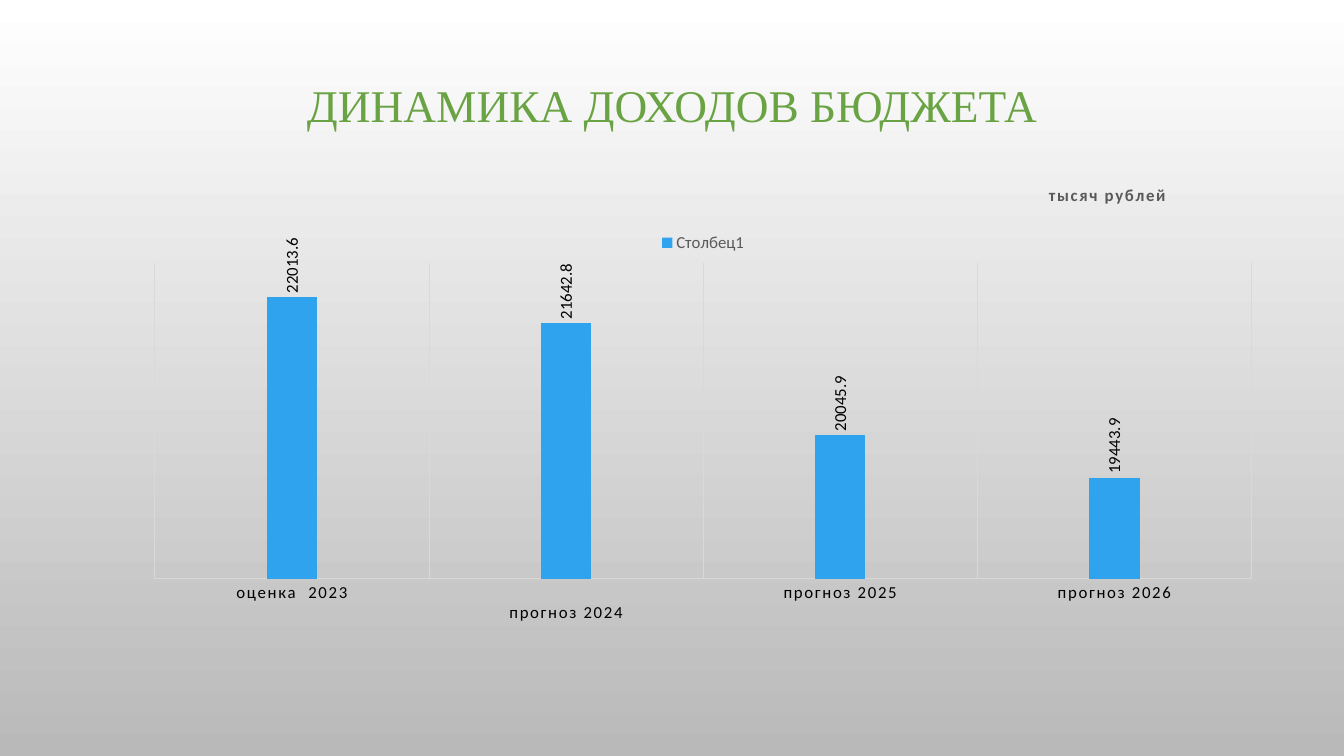
"""Build a slide with a column chart of budget revenue by year."""
from pptx import Presentation
from pptx.chart.data import CategoryChartData
from pptx.dml.color import RGBColor
from pptx.enum.chart import XL_CHART_TYPE, XL_LABEL_POSITION, XL_LEGEND_POSITION, XL_TICK_MARK
from pptx.enum.text import MSO_ANCHOR, PP_ALIGN
from pptx.oxml import parse_xml
from pptx.oxml.ns import nsdecls
from pptx.util import Inches, Pt

COLUMNS = XL_CHART_TYPE.COLUMN_CLUSTERED
OUTSIDE_END = XL_LABEL_POSITION.OUTSIDE_END
LEGEND_TOP = XL_LEGEND_POSITION.TOP
NO_TICKS = XL_TICK_MARK.NONE
MIDDLE = MSO_ANCHOR.MIDDLE
CENTER = PP_ALIGN.CENTER


def rgb(hex_color):
    return RGBColor.from_string(hex_color)


def place(part, index, inner, **fractions):
    for old_layout in part.xpath("c:layout"):
        part.remove(old_layout)
    target = '<c:layoutTarget val="inner"/>' if inner else ""
    modes = '<c:xMode val="edge"/><c:yMode val="edge"/>'
    sizes = "".join(f'<c:{key} val="{value}"/>' for key, value in fractions.items())
    part.insert(index, parse_xml(
        f'<c:layout {nsdecls("c")}><c:manualLayout>{target}{modes}{sizes}'
        "</c:manualLayout></c:layout>"))


prs = Presentation()
prs.slide_width, prs.slide_height = Inches(13.33), Inches(7.5)
slide = prs.slides.add_slide(prs.slide_layouts[6])

backdrop = slide.background.fill
backdrop.gradient()
backdrop.gradient_angle = 270
for stop, position, color in zip(backdrop.gradient_stops, (0, 1), ("FFFFFF", "B9B9B9")):
    stop.position = position
    stop.color.rgb = rgb(color)

heading = slide.shapes.add_textbox(Inches(1), Inches(0.68), Inches(11.33), Inches(1.07)).text_frame
heading_format = {"word_wrap": True, "vertical_anchor": MIDDLE, "margin_bottom": Inches(0.34)}
for key, value in heading_format.items():
    setattr(heading, key, value)
heading_line = heading.paragraphs[0]
heading_line.text = "ДИНАМИКА ДОХОДОВ БЮДЖЕТА"
heading_line.alignment = CENTER
heading_line.line_spacing = 0.9

revenue = CategoryChartData()
revenue.categories = ["оценка  2023", "\nпрогноз 2024", "прогноз 2025", "прогноз 2026"]
revenue.add_series("Столбец1", [22013.6, 21642.8, 20045.9, 19443.9])
chart = slide.shapes.add_chart(
    COLUMNS, Inches(1.31), Inches(1.75), Inches(11.33), Inches(4.54), revenue).chart
chart.has_title = True
units = chart.chart_title.text_frame.paragraphs[0]
units.text = "тысяч рублей"
chart.has_legend = True
chart.legend.position = LEGEND_TOP
chart.legend.include_in_layout = False

columns = chart.plots[0]
plot_format = {"gap_width": 444, "overlap": -90, "vary_by_categories": False}
for key, value in plot_format.items():
    setattr(columns, key, value)
income = columns.series[0]
income.format.fill.solid()
income.format.fill.fore_color.rgb = rgb("2FA3EE")
amounts = income.data_labels
amounts.show_value = True
amounts.position = OUTSIDE_END

years = chart.category_axis
years.major_tick_mark = NO_TICKS
years.has_major_gridlines = True
for line in (years.format.line, years.major_gridlines.format.line):
    line.color.rgb = rgb("D9D9D9")
    line.width = Pt(0.75)
scale = chart.value_axis
scale_format = {"visible": False, "has_major_gridlines": False,
                "minimum_scale": 18000, "maximum_scale": 22500}
for key, value in scale_format.items():
    setattr(scale, key, value)

for font, name, size, color, bold in (
    (heading_line.runs[0].font, "Times New Roman", 32.4, "6AA343", False),
    (chart.font, "Calibri", 10, "000000", False),
    (units.runs[0].font, "Calibri", 12, "595959", True),
    (chart.legend.font, "Calibri", 12, "595959", False),
    (amounts.font, "Calibri", 12, "000000", False),
    (years.tick_labels.font, "Calibri", 12, "000000", False),
):
    for key, value in {"name": name, "size": Pt(size), "bold": bold}.items():
        setattr(font, key, value)
    font.color.rgb = rgb(color)

chart_xml = chart.element
for spaced in chart_xml.xpath(".//c:title//a:rPr | .//c:catAx/c:txPr//a:defRPr"):
    spaced.set("spc", "120")
for label_body in chart_xml.xpath(".//c:dLbls/c:txPr/a:bodyPr"):
    label_body.set("rot", "-5400000")
    label_body.set("vert", "horz")
place(chart_xml.xpath(".//c:plotArea")[0], 0, True, x=0.02, y=0.19, w=0.96, h=0.69)
place(chart_xml.xpath(".//c:title")[0], 1, False, x=0.8, y=0.01)
place(chart_xml.xpath(".//c:legend")[0], 1, False, x=0.46, y=0.12, w=0.08, h=0.05)

prs.save("out.pptx")
